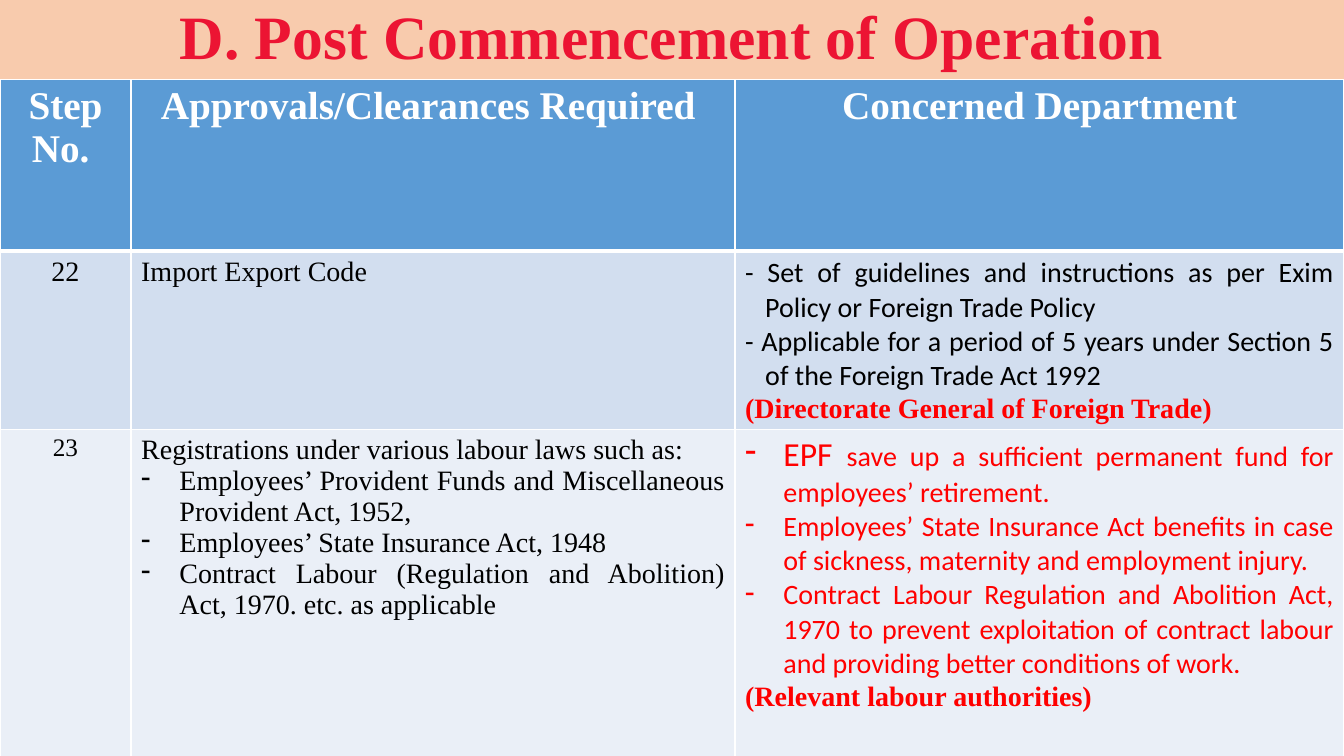
from lxml import etree
from pptx import Presentation
from pptx.dml.color import RGBColor
from pptx.enum.shapes import MSO_SHAPE
from pptx.enum.text import MSO_ANCHOR, PP_ALIGN
from pptx.oxml.ns import qn
from pptx.util import Inches, Pt

RECT = MSO_SHAPE.RECTANGLE
MIDDLE = MSO_ANCHOR.MIDDLE
LEFT, CENTER, FULL = PP_ALIGN.LEFT, PP_ALIGN.CENTER, PP_ALIGN.JUSTIFY
WIDE, HIGH = Inches(13.33), Inches(7.5)
SERIF, SANS = "Times New Roman", "Calibri"
INK = {
    "peach": "F8CBAD", "rose": "EC1433", "red": "FF0000", "black": "000000",
    "white": "FFFFFF", "blue": "5B9BD5", "pale": "D2DEEF", "light": "EAEFF7",
}

# Shares of the slide, in percent
TOP = 10.53
COLS = [9.75, 44.94, 45.31]
ROWS = [22.67, 22.27, 46.8]
FILLS = ["blue", "pale", "light"]

# Text formats
HEAD = dict(size=28, color="white", bold=True, align=CENTER)
STEP = dict(align=CENTER)
NOTE = dict(font=SANS, align=FULL, indent=0.2)
ITEM = dict(align=FULL, indent=0.38, bullet="-")
DUTY = dict(ITEM, font=SANS, color="red")
BODY = dict(color="red", bold=True)

# Each cell is a list of (text, format) paragraphs
CELLS = [
    [
        [("Step No. ", HEAD)],
        [("Approvals/Clearances Required ", HEAD)],
        [("Concerned Department", HEAD)],
    ],
    [
        [("22", STEP)],
        [("Import Export Code", {})],
        [
            ("- Set of guidelines and instructions as per Exim Policy or "
             "Foreign Trade Policy", NOTE),
            ("- Applicable for a period of 5 years under Section 5 of the "
             "Foreign Trade Act 1992", NOTE),
            ("(Directorate General of Foreign Trade)", dict(BODY, align=FULL)),
        ],
    ],
    [
        [("23", dict(STEP, size=18))],
        [
            ("Registrations under various labour laws such as:", dict(align=FULL)),
            ("Employees’ Provident Funds and Miscellaneous Provident Act, 1952,", ITEM),
            ("Employees’ State Insurance Act, 1948", ITEM),
            ("Contract Labour (Regulation and Abolition) Act, 1970. etc. "
             "as applicable", ITEM),
        ],
        [
            ("save up a sufficient permanent fund for employees’ retirement.",
             dict(DUTY, lead="EPF ")),
            ("Employees’ State Insurance Act benefits in case of sickness, "
             "maternity and employment injury.", DUTY),
            ("Contract Labour Regulation and Abolition Act, 1970 to prevent "
             "exploitation of contract labour and providing better "
             "conditions of work.", DUTY),
            ("(Relevant labour authorities)", BODY),
        ],
    ],
]


def across(share):
    return int(WIDE * share / 100)


def down(share):
    return int(HIGH * share / 100)


def tint(name):
    return RGBColor.from_string(INK[name])


def paint(fill, name):
    fill.solid()
    fill.fore_color.rgb = tint(name)


def write(para, text, size=20, font=SERIF, color="black", bold=False,
          align=LEFT, indent=0, bullet=None, lead=None, pitch=None):
    para.alignment = align
    if pitch:
        para.line_spacing = pitch
    props = para._p.get_or_add_pPr()
    if indent:
        props.set("marL", str(Inches(indent)))
        props.set("indent", str(-Inches(indent)))
    if bullet:
        etree.SubElement(props, qn("a:buChar")).set("char", bullet)
    parts = [(lead, 24)] if lead else []
    for words, points in parts + [(text, size)]:
        run = para.add_run()
        run.text = words
        run.font.size = Pt(points)
        run.font.name = font
        run.font.bold = bold
        run.font.color.rgb = tint(color)


def edge(cell, side, width):
    line = etree.SubElement(cell._tc.get_or_add_tcPr(), qn("a:" + side))
    line.set("w", str(Pt(width)))
    fill = etree.SubElement(line, qn("a:solidFill"))
    etree.SubElement(fill, qn("a:srgbClr")).set("val", INK["white"])


def banner(slide, text):
    box = slide.shapes.add_shape(RECT, 0, 0, WIDE, down(TOP))
    box.shadow.inherit = False
    paint(box.fill, "peach")
    box.line.fill.background()
    frame = box.text_frame
    frame.word_wrap = True
    frame.vertical_anchor = MIDDLE
    write(frame.paragraphs[0], text, size=44, color="rose", bold=True,
          align=CENTER, pitch=0.9)


def fill_cell(cell, paras, row):
    # Borders come before the fill; the header is closed by a thick rule
    for side, width in (("lnL", 1), ("lnR", 1),
                        ("lnT", 3 if row == 1 else 1),
                        ("lnB", 3 if row == 0 else 1)):
        edge(cell, side, width)
    paint(cell.fill, FILLS[row])
    frame = cell.text_frame
    for index, (text, style) in enumerate(paras):
        para = frame.add_paragraph() if index else frame.paragraphs[0]
        write(para, text, **style)


def grid(slide):
    table = slide.shapes.add_table(len(ROWS), len(COLS), 0, down(TOP),
                                   WIDE, down(sum(ROWS))).table
    for col, share in zip(table.columns, COLS):
        col.width = across(share)
    for row, share in zip(table.rows, ROWS):
        row.height = down(share)
    for r, cells in enumerate(CELLS):
        for c, paras in enumerate(cells):
            fill_cell(table.cell(r, c), paras, r)


def main():
    deck = Presentation()
    deck.slide_width, deck.slide_height = WIDE, HIGH
    slide = deck.slides.add_slide(deck.slide_layouts[6])
    banner(slide, "D. Post Commencement of Operation")
    grid(slide)
    deck.save("out.pptx")


if __name__ == "__main__":
    main()
